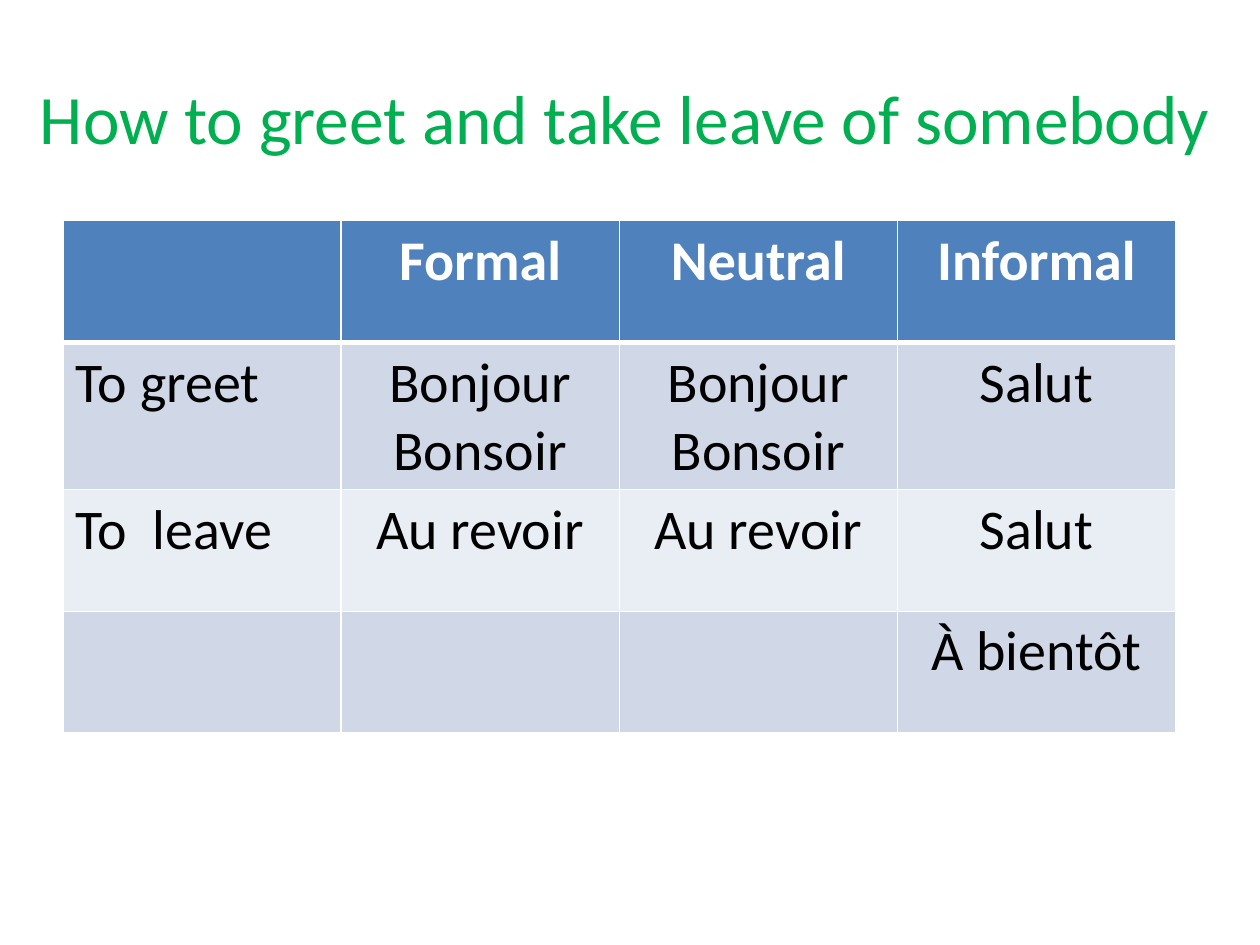
from dataclasses import dataclass

from lxml.etree import SubElement
from pptx import Presentation
from pptx.dml.color import RGBColor
from pptx.enum.text import MSO_ANCHOR, PP_ALIGN
from pptx.oxml.ns import qn
from pptx.util import Inches, Pt

COLORS = {
    "title": "00B050",
    "header": "4F81BD",
    "band": "D0D8E8",
    "plain": "E9EDF4",
    "border": "FFFFFF",
    "header_text": "FFFFFF",
    "body_text": "000000",
}
FONT = "Calibri"


@dataclass
class GreetingRow:
    texts: tuple[str, str, str, str]
    fill: str
    top_border: float = 1
    bottom_border: float = 1
    header: bool = False


ROWS = [
    GreetingRow(("", "Formal", "Neutral", "Informal"), "header", bottom_border=3, header=True),
    GreetingRow(("To greet", "Bonjour\nBonsoir", "Bonjour\nBonsoir", "Salut"), "band", top_border=3),
    GreetingRow(("To  leave", "Au revoir", "Au revoir", "Salut"), "plain"),
    GreetingRow(("", "", "", "À bientôt"), "band"),
]


def style_text(frame, size: float, color: str, align: PP_ALIGN, bold: bool = False) -> None:
    for para in frame.paragraphs:
        para.alignment = align
        for span in para.runs:
            span.font.name = FONT
            span.font.size = Pt(size)
            span.font.bold = bold
            span.font.color.rgb = RGBColor.from_string(COLORS[color])


def add_borders(cell, row: GreetingRow) -> None:
    properties = cell._tc.get_or_add_tcPr()
    widths = {"lnL": 1, "lnR": 1, "lnT": row.top_border, "lnB": row.bottom_border}
    for side, width in widths.items():
        line = SubElement(properties, qn(f"a:{side}"), w=str(Pt(width)))
        fill = SubElement(line, qn("a:solidFill"))
        SubElement(fill, qn("a:srgbClr"), val=COLORS["border"])


def add_title(page, text: str) -> None:
    box = page.shapes.add_textbox(Inches(0.17), Inches(0.3), Inches(9.58), Inches(1.25))
    frame = box.text_frame
    frame.word_wrap = True
    frame.vertical_anchor = MSO_ANCHOR.MIDDLE
    frame.text = text
    style_text(frame, 39.6, "title", PP_ALIGN.CENTER)


def add_greeting_table(page, rows: list[GreetingRow]) -> None:
    table = page.shapes.add_table(
        len(rows), len(rows[0].texts), Inches(0.5), Inches(1.75), Inches(8.83), Inches(3.87)
    ).table
    for row_index, row in enumerate(rows):
        for column_index, text in enumerate(row.texts):
            cell = table.cell(row_index, column_index)
            add_borders(cell, row)
            cell.fill.solid()
            cell.fill.fore_color.rgb = RGBColor.from_string(COLORS[row.fill])
            cell.text_frame.text = text
            align = PP_ALIGN.CENTER if column_index else PP_ALIGN.LEFT
            color = "header_text" if row.header else "body_text"
            style_text(cell.text_frame, 32, color, align, row.header)


def main() -> None:
    """Build the slide on greeting and taking leave in French."""
    deck = Presentation()
    deck.slide_width = Inches(10)
    deck.slide_height = Inches(7.5)
    page = deck.slides.add_slide(deck.slide_layouts[6])
    add_title(page, "How to greet and take leave of somebody")
    add_greeting_table(page, ROWS)
    deck.save("out.pptx")


if __name__ == "__main__":
    main()
